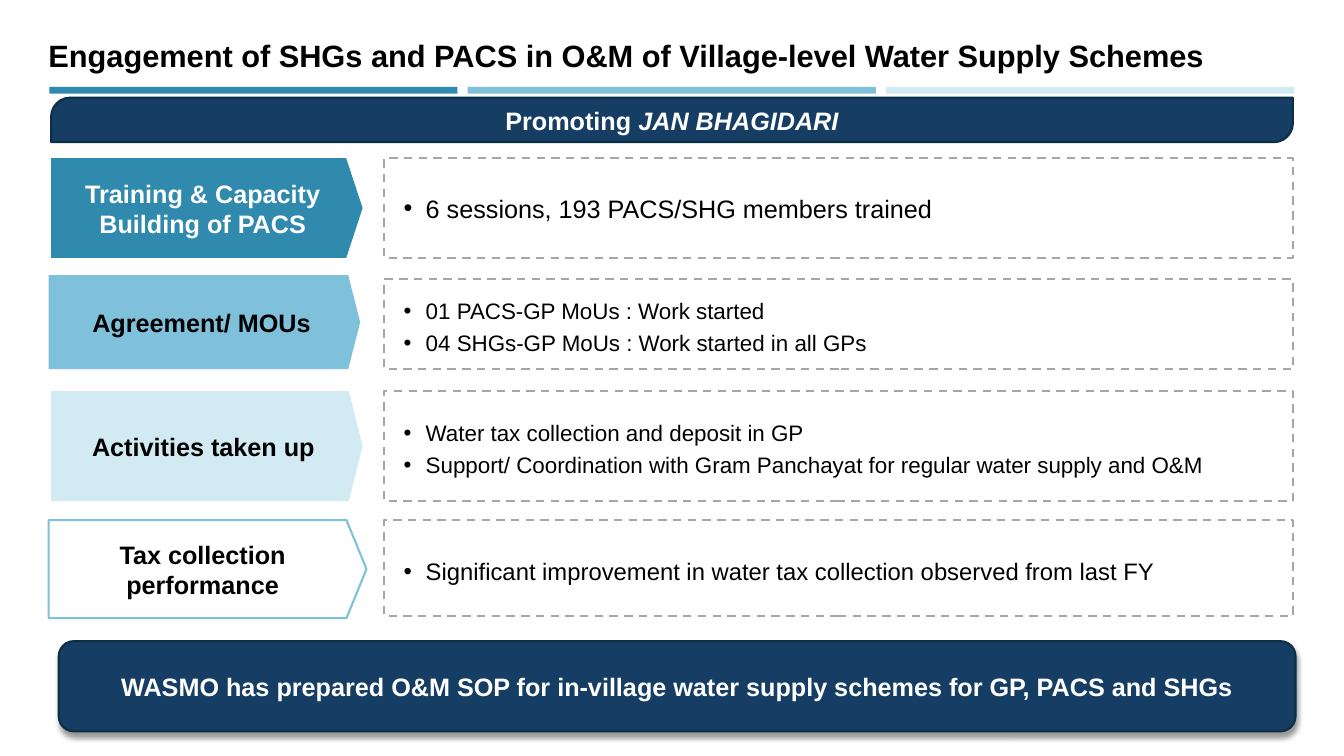
from lxml import etree
from pptx import Presentation
from pptx.dml.color import RGBColor
from pptx.enum.dml import MSO_LINE
from pptx.enum.shapes import MSO_SHAPE
from pptx.enum.text import MSO_ANCHOR, MSO_AUTO_SIZE, PP_ALIGN
from pptx.oxml.ns import qn
from pptx.util import Pt

RECTANGLE = MSO_SHAPE.RECTANGLE
PENTAGON = MSO_SHAPE.PENTAGON
ROUNDED = MSO_SHAPE.ROUNDED_RECTANGLE
DIAGONAL_ROUNDED = MSO_SHAPE.ROUND_2_DIAG_RECTANGLE
DASH = MSO_LINE.DASH
MIDDLE = MSO_ANCHOR.MIDDLE
NO_AUTOFIT = MSO_AUTO_SIZE.NONE
LEFT, CENTER = PP_ALIGN.LEFT, PP_ALIGN.CENTER

FONT = "Arial"
COMPARISON_LAYOUT = 3 + 1  # title plus four body placeholders
COLORS = {
    "teal": "308AAE", "sky": "7FC1DB", "ice": "D2EAF2",
    "navy": "163E64", "navy_edge": "0B3041", "dash": "A6A6A6",
    "black": "000000", "white": "FFFFFF",
}

# Label: text, fill, outline, text colour, (left, top, width, height), point depth
# List: (top, height), font size, line spacing, items
ROWS = [
    (("Training & Capacity Building of PACS", "teal", None, "white",
      (36.5, 113, 222.5, 71.3), 0.164),
     ((113, 71.3), 18, 1.0, ["6 sessions, 193 PACS/SHG members trained"])),
    (("Agreement/ MOUs", "sky", None, "black",
      (34.8, 196.6, 222.5, 67), 0.127),
     ((199.4, 64.3), 16, 1.2, ["01 PACS-GP MoUs : Work started",
                               "04 SHGs-GP MoUs : Work started in all GPs"])),
    (("Activities taken up", "ice", None, "black",
      (36.5, 279.3, 222.5, 78.6), 0.125),
     ((279.3, 78.6), 16, 1.2,
      ["Water tax collection and deposit in GP",
       "Support/ Coordination with Gram Panchayat for regular water supply and O&M"])),
    (("Tax collection performance", None, "sky", "black",
      (34.8, 371.5, 227, 70), 0.204),
     ((371.5, 68.5), 17, 1.2,
      ["Significant improvement in water tax collection observed from last FY"])),
]


def color(name):
    return RGBColor.from_string(COLORS[name])


def place(shape, left, top, width, height):
    shape.left, shape.top = Pt(left), Pt(top)
    shape.width, shape.height = Pt(width), Pt(height)


def style_font(paragraph, size, font_color, bold):
    font = paragraph.font
    font.name, font.size, font.bold = FONT, Pt(size), bold
    font.color.rgb = color(font_color)


def add_block(slide, kind, box, fill=None, line=None, adjustments=()):
    shape = slide.shapes.add_shape(kind, *map(Pt, box))
    shape.shadow.inherit = False
    for index, value in enumerate(adjustments):
        shape.adjustments[index] = value
    if fill:
        shape.fill.solid()
        shape.fill.fore_color.rgb = color(fill)
    else:
        shape.fill.background()
    if line:
        shape.line.color.rgb = color(line)
        shape.line.width = Pt(1.5)
    else:
        shape.line.fill.background()
    return shape


def write_centered(shape, runs, font_color):
    """Write (text, italic) runs in one bold, centred paragraph."""
    frame = shape.text_frame
    frame.word_wrap = True
    frame.vertical_anchor = MIDDLE
    paragraph = frame.paragraphs[0]
    paragraph.alignment = CENTER
    for text, italic in runs:
        run = paragraph.add_run()
        run.text = text
        if italic:
            run.font.italic = True
    style_font(paragraph, 18, font_color, True)


def set_title(slide, text):
    title = slide.shapes.title
    place(title, 27.4, 22.3, 920, 34)
    frame = title.text_frame
    frame.auto_size = NO_AUTOFIT
    frame.vertical_anchor = MIDDLE
    frame.text = text
    paragraph = frame.paragraphs[0]
    paragraph.alignment = LEFT
    style_font(paragraph, 22, "black", True)


def add_bullet(paragraph):
    properties = paragraph._p.get_or_add_pPr()
    properties.set("marL", str(Pt(22.5)))
    properties.set("indent", str(-Pt(15.75)))
    etree.SubElement(properties, qn("a:buFont"), typeface=FONT)
    etree.SubElement(properties, qn("a:buChar"), char="•")


def fill_list(placeholder, extent, size, spacing, items):
    top, height = extent
    place(placeholder, 274.4, top, 649.4, height)
    placeholder.line.color.rgb = color("dash")
    placeholder.line.width = Pt(1.5)
    placeholder.line.dash_style = DASH
    frame = placeholder.text_frame
    frame.auto_size = NO_AUTOFIT
    frame.vertical_anchor = MIDDLE
    frame.text = "\n".join(items)
    for paragraph in frame.paragraphs:
        add_bullet(paragraph)
        paragraph.line_spacing = spacing
        paragraph.space_before = Pt(0)
        style_font(paragraph, size, "black", False)


def add_drop_shadow(shape):
    effects = shape._element.spPr.find(qn("a:effectLst"))
    shadow = etree.SubElement(effects, qn("a:outerShdw"), blurRad=str(Pt(4)),
                              dist=str(Pt(3)), dir="5400000", rotWithShape="0")
    tint = etree.SubElement(shadow, qn("a:srgbClr"), val=COLORS["black"])
    etree.SubElement(tint, qn("a:alpha"), val="40000")


def main():
    presentation = Presentation()
    presentation.slide_width, presentation.slide_height = Pt(960), Pt(540)
    slide = presentation.slides.add_slide(
        presentation.slide_layouts[COMPARISON_LAYOUT])

    # Title and three-colour rule
    set_title(slide, "Engagement of SHGs and PACS in O&M of "
                     "Village-level Water Supply Schemes")
    for index, fill in enumerate(("teal", "sky", "ice")):
        add_block(slide, RECTANGLE, (35.2 + index * 298.8, 62, 291.6, 5), fill)

    # Heading banner
    banner = add_block(slide, DIAGONAL_ROUNDED, (36.5, 69.8, 887, 31.8),
                       "navy", "navy_edge", (0.429, 0))
    write_centered(banner, [("Promoting ", False), ("JAN BHAGIDARI", True)], "white")

    # Labelled rows
    for index, (label, listing) in enumerate(ROWS, start=1):
        text, fill, line, font_color, box, depth = label
        arrow = add_block(slide, PENTAGON, box, fill, line, (depth,))
        write_centered(arrow, [(text, False)], font_color)
        fill_list(slide.placeholders[index], *listing)

    # Closing message
    closing = add_block(slide, ROUNDED, (42, 458, 883.4, 64.4), "navy", "navy_edge")
    add_drop_shadow(closing)
    write_centered(closing, [("WASMO has prepared O&M SOP for in-village water supply "
                              "schemes for GP, PACS and SHGs", False)], "white")

    presentation.save("out.pptx")


if __name__ == "__main__":
    main()
